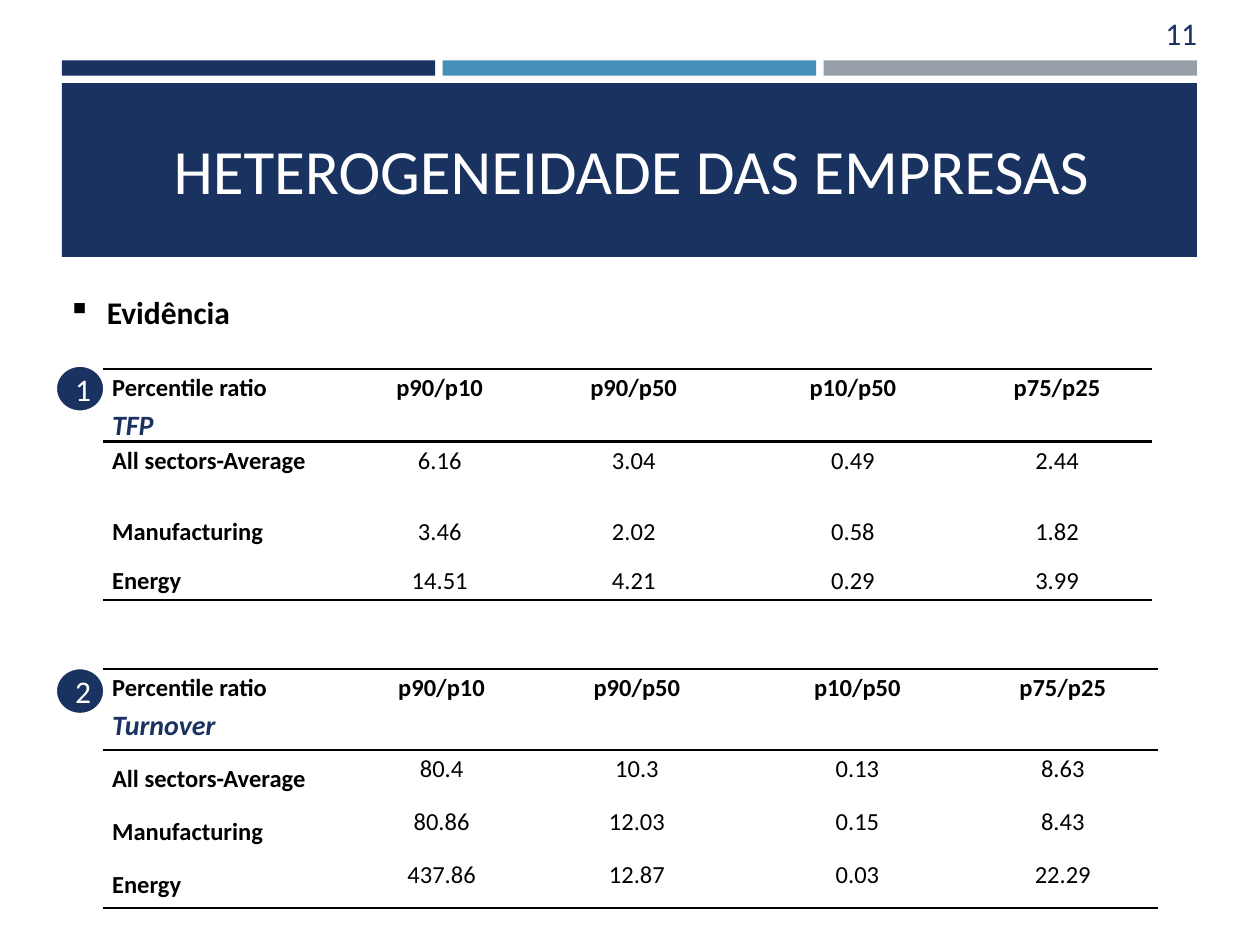
from dataclasses import dataclass

from lxml.etree import SubElement
from pptx import Presentation
from pptx.dml.color import RGBColor
from pptx.enum.shapes import MSO_SHAPE as Preset
from pptx.enum.text import MSO_ANCHOR as Anchor, PP_ALIGN as Align
from pptx.oxml.ns import qn
from pptx.util import Inches, Pt

NAVY = RGBColor(0x1A, 0x32, 0x60)
BLUE = RGBColor(0x45, 0x90, 0xB8)
GRAY = RGBColor(0x96, 0x9F, 0xA7)
BLACK = RGBColor(0, 0, 0)
WHITE = RGBColor(0xFF, 0xFF, 0xFF)
FONT = "Calibri"
LEFT, WIDTH, GAP = 0.49, 9.01, 0.06
RATIOS = ["p90/p10", "p90/p50", "p10/p50", "p75/p25"]


@dataclass
class RatioTable:
    number: int
    measure: str
    top: float
    badge_top: float
    columns: list[float]
    heights: list[float]
    label_spacing: list[float]
    value_spacing: list[float]
    rows: list[list[str]]


TABLES = [
    RatioTable(1, "TFP", 2.93, 2.9, [2, 1.34, 1.74, 1.74, 1.5],
               [0.57, 0.48, 0.39, 0.39], [1.15, 1.15, 1.5, 1.5], [1.15, 1.15, 1.5, 1.5],
               [["All sectors-Average", "6.16", "3.04", "0.49", "2.44"],
                ["Manufacturing", "3.46", "2.02", "0.58", "1.82"],
                ["Energy", "14.51", "4.21", "0.29", "3.99"]]),
    RatioTable(2, "Turnover", 5.31, 5.3, [2.01, 1.35, 1.75, 1.75, 1.51],
               [0.64, 0.42, 0.42, 0.42], [1.15, 1.5, 1.5, 1.5], [1.15] * 4,
               [["All sectors-Average", "80.4", "10.3", "0.13", "8.63"],
                ["Manufacturing", "80.86", "12.03", "0.15", "8.43"],
                ["Energy", "437.86", "12.87", "0.03", "22.29"]]),
]


def style(paragraph, size: float, color: RGBColor, bold=False, italic=False,
          align=Align.LEFT, spacing: float = 1.0) -> None:
    font = paragraph.font
    font.name, font.size, font.bold, font.italic = FONT, Pt(size), bold, italic
    font.color.rgb = color
    paragraph.alignment = align
    paragraph.line_spacing = spacing


def add_filled(slide, preset, left: float, top: float, width: float, height: float,
               color: RGBColor):
    shape = slide.shapes.add_shape(preset, Inches(left), Inches(top),
                                   Inches(width), Inches(height))
    shape.shadow.inherit = False
    shape.fill.solid()
    shape.fill.fore_color.rgb = color
    shape.line.fill.background()
    return shape


def add_text(slide, text: str, left: float, top: float, width: float, height: float,
             color: RGBColor, bold=False):
    box = slide.shapes.add_textbox(Inches(left), Inches(top), Inches(width), Inches(height))
    box.text_frame.word_wrap = True
    paragraph = box.text_frame.paragraphs[0]
    paragraph.text = text
    style(paragraph, 18, color, bold)
    return paragraph


def set_rules(cell, top: bool, bottom: bool) -> None:
    """Rule the cell above and below where asked; every other edge is bare."""
    properties = cell._tc.get_or_add_tcPr()
    edges = {"a:lnL": False, "a:lnR": False, "a:lnT": top, "a:lnB": bottom}
    for position, (tag, ruled) in enumerate(edges.items()):
        line = SubElement(properties, qn(tag), w=str(Pt(1.5)))
        properties.insert(position, line)
        if ruled:
            fill = SubElement(line, qn("a:solidFill"))
            SubElement(fill, qn("a:srgbClr"), val=str(BLACK))
        else:
            SubElement(line, qn("a:noFill"))


def add_ratio_table(slide, data: RatioTable) -> None:
    rows = [["Percentile ratio", *RATIOS], *data.rows]
    frame = slide.shapes.add_table(len(rows), len(data.columns), Inches(0.82), Inches(data.top),
                                   Inches(sum(data.columns)), Inches(sum(data.heights)))
    table = frame.table
    table.first_row = table.horz_banding = False
    for column, width in zip(table.columns, data.columns):
        column.width = Inches(width)
    for r, texts in enumerate(rows):
        table.rows[r].height = Inches(data.heights[r])
        for c, text in enumerate(texts):
            cell = table.cell(r, c)
            cell.fill.background()
            cell.margin_left = cell.margin_right = Inches(0.07)
            cell.margin_top = cell.margin_bottom = 0
            set_rules(cell, top=r <= 1, bottom=r in (0, len(rows) - 1))
            cell.text = text
            spacing = data.value_spacing[r] if c else data.label_spacing[r]
            style(cell.text_frame.paragraphs[0], 14, BLACK, bold=r == 0 or c == 0,
                  align=Align.CENTER if c else Align.LEFT, spacing=spacing)

    # Measure name under the first heading
    measure = table.cell(0, 0).text_frame.add_paragraph()
    measure.text = data.measure
    style(measure, 16, NAVY, bold=True, italic=True, spacing=1.15)


def add_badge(slide, data: RatioTable) -> None:
    badge = add_filled(slide, Preset.OVAL, 0.44, data.badge_top, 0.39, 0.37, NAVY)
    badge.line.color.rgb = WHITE
    badge.line.width = Pt(1.75)
    badge.text_frame.vertical_anchor = Anchor.MIDDLE
    number = badge.text_frame.paragraphs[0]
    number.text = str(data.number)
    style(number, 18, WHITE, align=Align.CENTER)


def main() -> None:
    deck = Presentation()
    deck.slide_width, deck.slide_height = Inches(10), Inches(7.5)
    slide = deck.slides.add_slide(deck.slide_layouts[5])

    # Colour strips and title band
    strip = (WIDTH - 2 * GAP) / 3
    for i, color in enumerate([NAVY, BLUE, GRAY]):
        add_filled(slide, Preset.RECTANGLE, LEFT + i * (strip + GAP), 0.48, strip, 0.12, color)
    band = add_filled(slide, Preset.RECTANGLE, LEFT, 0.66, WIDTH, 1.38, NAVY)

    # Title, brought in front of the band
    title = slide.shapes.title
    band._element.addnext(title._element)
    title.left, title.top = Inches(0.64), Inches(0.75)
    title.width, title.height = Inches(8.74), Inches(1.18)
    title.text_frame.vertical_anchor = Anchor.MIDDLE
    heading = title.text_frame.paragraphs[0]
    heading.text = "HETEROGENEIDADE DAS EMPRESAS"
    style(heading, 36, WHITE, align=Align.CENTER)

    # Page number and bulleted lead
    add_text(slide, "11", 9.15, 0.06, 0.52, 0.4, NAVY)
    lead = add_text(slide, "Evidência", 0.44, 2.28, 9.06, 0.71, BLACK, bold=True)
    properties = lead._p.get_or_add_pPr()
    properties.set("marL", str(Inches(0.31)))
    properties.set("indent", str(-Inches(0.31)))
    bullet = SubElement(properties, qn("a:buChar"), char="▪")
    properties.find(qn("a:defRPr")).addprevious(bullet)

    # Evidence tables, then their numbers
    for data in TABLES:
        add_ratio_table(slide, data)
    for data in TABLES:
        add_badge(slide, data)

    deck.save("out.pptx")


if __name__ == "__main__":
    main()
